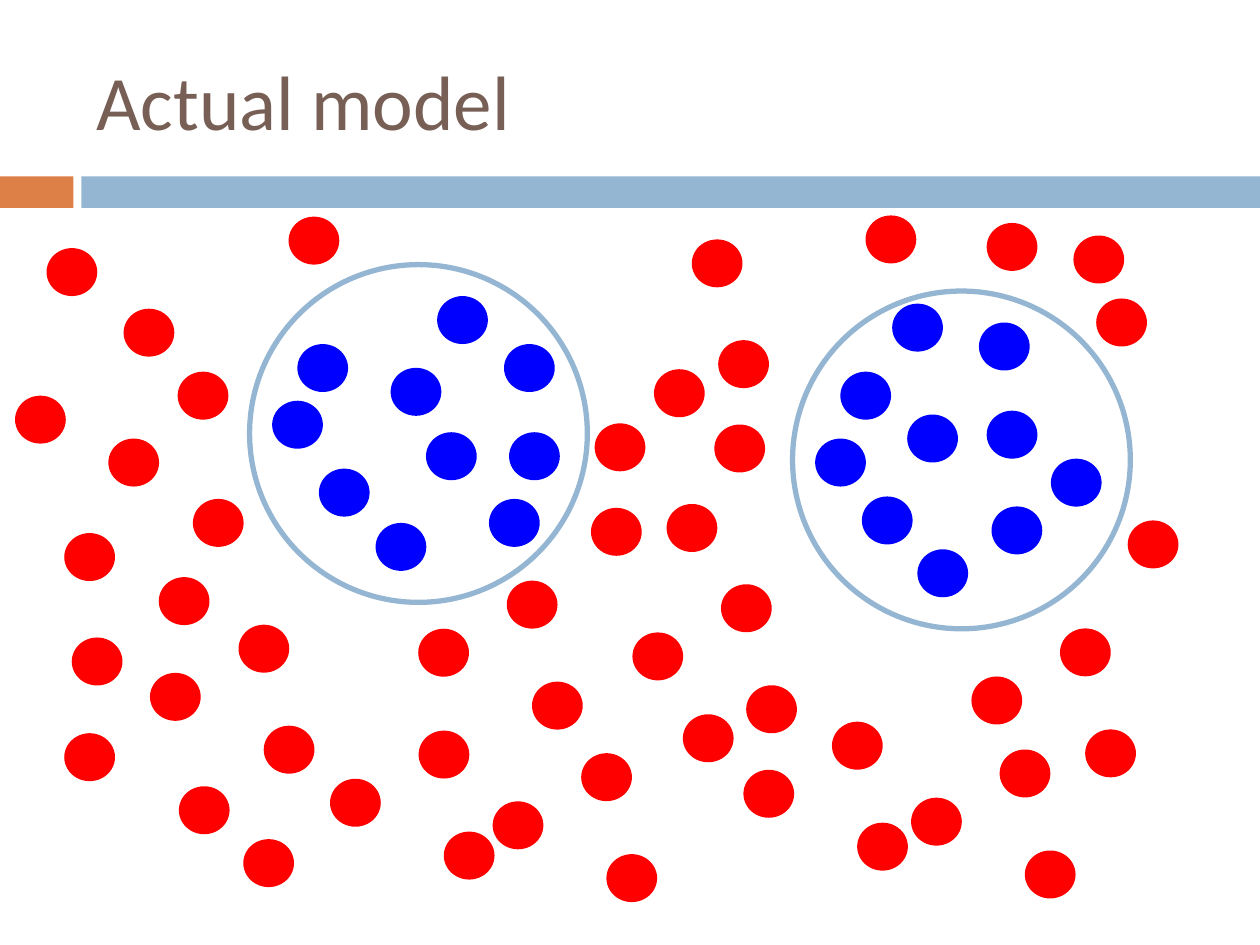
from typing import NamedTuple

from pptx import Presentation
from pptx.dml.color import RGBColor
from pptx.enum.shapes import MSO_SHAPE as Kind
from pptx.enum.text import MSO_ANCHOR as Anchor
from pptx.util import Pt

BLUE, RED = "0000FF", "FF0000"
SKY, RUST, BROWN = "94B6D2", "DD8047", "775F55"


class Box(NamedTuple):
    x: float
    y: float
    w: float
    h: float


class Spot(NamedTuple):
    x: float
    y: float


class Group(NamedTuple):
    ring: Spot
    dots: list[Spot]


DOT_W, DOT_H = 29, 27.4
RING = 193

GROUPS = [
    Group(Spot(142.6, 151.2), [
        Spot(169.9, 196.6), Spot(182.2, 267.8), Spot(223.2, 210.2),
        Spot(243.4, 247), Spot(249.8, 169.2), Spot(290.9, 247),
        Spot(214.6, 298.8), Spot(288, 196.6), Spot(279.4, 285.1),
        Spot(155.5, 229),
    ]),
    Group(Spot(452.9, 166.3), [
        Spot(480.2, 212.4), Spot(492.5, 283.7), Spot(518.4, 236.9),
        Spot(563.8, 234.7), Spot(559.4, 184.3), Spot(600.5, 262.1),
        Spot(524.2, 313.9), Spot(566.6, 289.4), Spot(509.8, 173.5),
        Spot(465.8, 250.6),
    ]),
]

# Steps from the first red dot of a trio to each of its three dots.
TRIO = [Spot(0, 0), Spot(50.6, -27.5), Spot(65, 30.2)]
STARTS = [
    Spot(239, 359.3), Spot(555.1, 386.6), Spot(424.8, 439.9),
    Spot(361.4, 361.4), Spot(281.5, 457.9), Spot(188.6, 445),
    Spot(85.7, 384.5), Spot(520.6, 455.8),
]

LOOSE = [
    Spot(390.2, 408.2), Spot(139, 479.5), Spot(36.7, 419),
    Spot(102.2, 449.3), Spot(90.7, 329.8), Spot(41, 364.3),
    Spot(36.7, 304.6), Spot(337.7, 290.2), Spot(101.5, 212.4),
    Spot(339.8, 241.9), Spot(110.2, 285.1), Spot(408.2, 242.6),
    Spot(395.3, 136.8), Spot(410.4, 194.4), Spot(373.7, 211),
    Spot(380.9, 288), Spot(164.9, 123.8), Spot(70.6, 176.4),
    Spot(61.9, 250.6), Spot(8.6, 226.1), Spot(26.6, 141.8),
    Spot(494.6, 123.1), Spot(613.4, 134.6), Spot(563.8, 127.4),
    Spot(644.4, 297.4), Spot(626.4, 170.6),
]


def tint(code: str) -> RGBColor:
    return RGBColor.from_string(code)


def draw(slide, kind: Kind, box: Box, fill: str = "", line: str = "",
         width: float = 3) -> None:
    """Add a preset shape; an empty colour means no fill or no line."""
    shape = slide.shapes.add_shape(kind, *map(Pt, box))
    shape.shadow.inherit = False
    if fill:
        shape.fill.solid()
        shape.fill.fore_color.rgb = tint(fill)
    else:
        shape.fill.background()
    if line:
        shape.line.color.rgb = tint(line)
        shape.line.width = Pt(width)
    else:
        shape.line.fill.background()


def dot(slide, spot: Spot, fill: str) -> None:
    draw(slide, Kind.OVAL, Box(spot.x, spot.y, DOT_W, DOT_H), fill)


def write(slide, text: str, box: Box, *, size: float, color: str,
          font: str = "Calibri", anchor: Anchor = Anchor.MIDDLE) -> None:
    frame = slide.shapes.add_textbox(*map(Pt, box)).text_frame
    frame.word_wrap = True
    frame.vertical_anchor = anchor
    run = frame.paragraphs[0].add_run()
    run.text = text
    run.font.name = font
    run.font.size = Pt(size)
    run.font.color.rgb = tint(color)


def main() -> None:
    deck = Presentation()
    deck.slide_width, deck.slide_height = Pt(720), Pt(540)
    slide = deck.slides.add_slide(deck.slide_layouts[6])

    draw(slide, Kind.RECTANGLE, Box(0, 100.8, 42, 18), RUST)
    draw(slide, Kind.RECTANGLE, Box(46.5, 100.8, 673.5, 18), SKY)
    write(slide, "Actual model", Box(48, 18, 642, 78), size=44, color=BROWN)

    for group in GROUPS:
        for spot in group.dots:
            dot(slide, spot, BLUE)
        draw(slide, Kind.OVAL, Box(*group.ring, RING, RING), line=SKY)

    trios = [Spot(a.x + b.x, a.y + b.y) for a in STARTS for b in TRIO]
    for spot in trios + LOOSE:
        dot(slide, spot, RED)

    deck.save("out.pptx")


if __name__ == "__main__":
    main()
